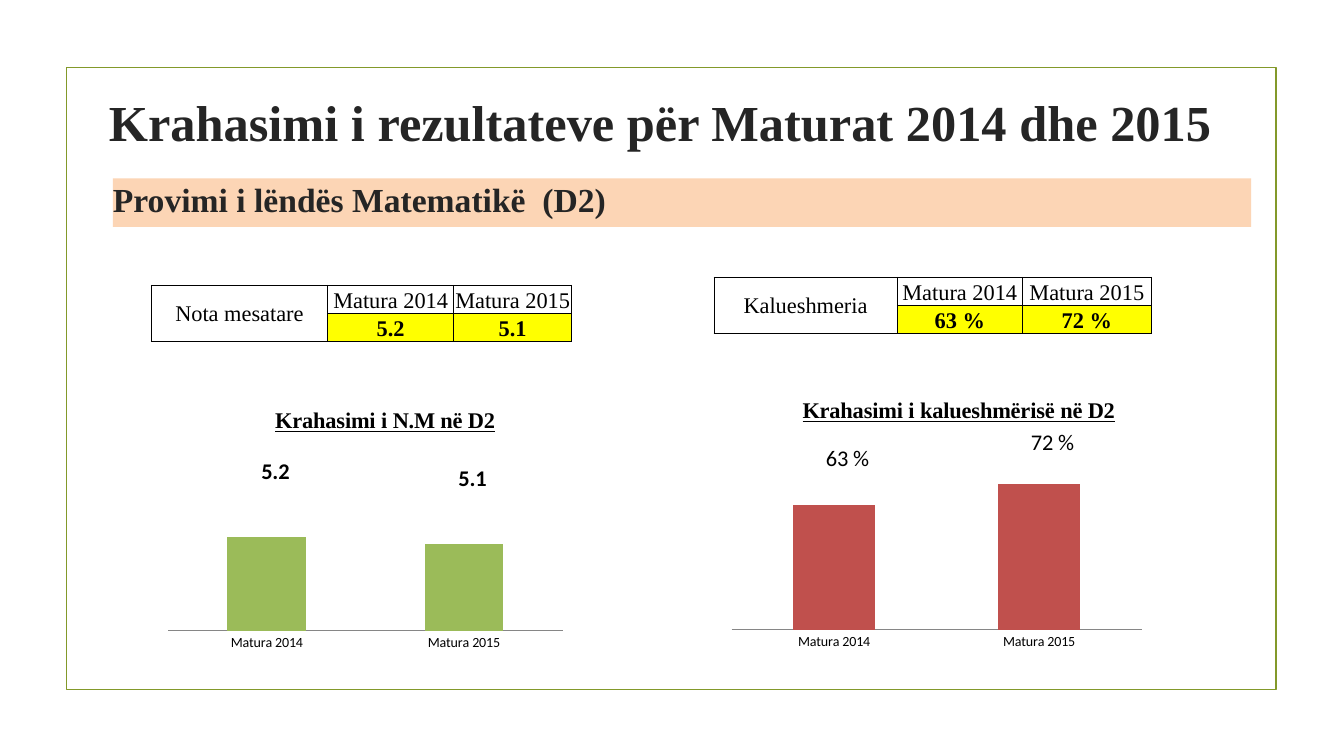
from dataclasses import dataclass

from lxml import etree
from pptx import Presentation
from pptx.chart.data import CategoryChartData
from pptx.dml.color import RGBColor
from pptx.enum.chart import XL_CHART_TYPE, XL_LABEL_POSITION, XL_TICK_LABEL_POSITION, XL_TICK_MARK
from pptx.enum.shapes import MSO_SHAPE
from pptx.enum.text import MSO_ANCHOR, PP_ALIGN
from pptx.oxml.ns import qn
from pptx.util import Inches, Pt

RECTANGLE = MSO_SHAPE.RECTANGLE
TOP, MIDDLE, BOTTOM = MSO_ANCHOR.TOP, MSO_ANCHOR.MIDDLE, MSO_ANCHOR.BOTTOM
LEFT, CENTER = PP_ALIGN.LEFT, PP_ALIGN.CENTER
COLUMNS = XL_CHART_TYPE.COLUMN_CLUSTERED
OUTSIDE_END = XL_LABEL_POSITION.OUTSIDE_END
NEXT_TO_AXIS = XL_TICK_LABEL_POSITION.NEXT_TO_AXIS
NO_TICKS = XL_TICK_MARK.NONE

SERIF, SANS = "Times New Roman", "Calibri"
COLORS = {
    "frame": "83992A", "heading": "252525", "band": "FCD5B5", "text": "000000",
    "highlight": "FFFF00", "axis": "868686", "green": "9BBB59", "red": "C0504D",
}
YEARS = ("Matura 2014", "Matura 2015")
ROW_HEIGHT = 0.28
CHART_2012 = "http://schemas.microsoft.com/office/drawing/2012/chart"
LABEL_EXTENSION = "{CE6537A1-D6FC-4f65-9D91-7224C49458BB}"


@dataclass
class Comparison:
    """One measure of both years: its table and its column chart."""
    measure: str
    values: tuple[float, float]
    shown: tuple[str, str]
    table_at: tuple[float, float]
    column_widths: tuple[float, float, float]
    chart_title: str
    chart_at: tuple[float, float, float, float]
    title_at: tuple[float, float]
    plot_at: tuple[float, float, float, float]
    axis_range: tuple[float, float]
    number_format: str
    color: str
    bold_labels: bool
    label_shifts: tuple[tuple[float, float], tuple[float, float]]


COMPARISONS = (
    Comparison("Kalueshmeria", (63, 72), ("63 %", "72 %"), (7.08, 2.75), (1.82, 1.24, 1.28),
               "Krahasimi i kalueshmërisë në D2", (7.08, 3.75, 4.42, 2.81), (0.19, 0.05),
               (0.04, 0.14, 0.92, 0.75), (10, 100), '0" %"', "red", False,
               ((0.03, -0.1), (0.03, -0.08))),
    Comparison("Nota mesatare", (5.2, 5.1), ("5.2", "5.1"), (1.5, 2.83), (1.75, 1.25, 1.17),
               "Krahasimi i N.M në D2", (1.5, 3.67, 4.25, 2.91), (0.28, 0.11),
               (0.04, 0.15, 0.92, 0.74), (3.9, 6.9), "0.0", "green", True,
               ((0.02, -0.16), (0.02, -0.16))),
)


def rgb(name: str) -> RGBColor:
    return RGBColor.from_string(COLORS[name])


def format_font(font, size: float, name: str = SERIF, color: str = "text",
                bold: bool = False, underline: bool = False) -> None:
    font.size, font.name = Pt(size), name
    font.bold, font.underline = bold, underline
    font.color.rgb = rgb(color)


def write(frame, text: str, align=LEFT, **font_format) -> None:
    para = frame.paragraphs[0]
    para.alignment = align
    span = para.add_run()
    span.text = text
    format_font(span.font, **font_format)


def add_frame(page) -> None:
    frame = page.shapes.add_shape(RECTANGLE, Inches(0.66), Inches(0.67), Inches(12), Inches(6.17))
    frame.shadow.inherit = False
    frame.fill.background()
    frame.line.color.rgb = rgb("frame")
    frame.line.width = Pt(1.25)


def add_heading(page, text: str, at: tuple[float, float, float, float], size: float,
                fill: str | None = None) -> None:
    box = page.shapes.add_textbox(*map(Inches, at))
    if fill:
        box.fill.solid()
        box.fill.fore_color.rgb = rgb(fill)
    frame = box.text_frame
    frame.word_wrap = True
    frame.vertical_anchor = TOP
    frame.margin_left = frame.margin_right = frame.margin_top = frame.margin_bottom = 0
    write(frame, text, size=size, color="heading", bold=True)


def add_borders(cell) -> None:
    properties = cell._tc.get_or_add_tcPr()
    for side in ("a:lnL", "a:lnR", "a:lnT", "a:lnB"):
        line = etree.SubElement(properties, qn(side), w=str(Pt(0.5)))
        fill = etree.SubElement(line, qn("a:solidFill"))
        etree.SubElement(fill, qn("a:srgbClr"), val=COLORS["text"])


def add_table(page, item: Comparison) -> None:
    left, top = item.table_at
    table = page.shapes.add_table(2, 3, Inches(left), Inches(top),
                                  Inches(sum(item.column_widths)), Inches(2 * ROW_HEIGHT)).table
    table.first_row = table.horz_banding = False
    for column, width in zip(table.columns, item.column_widths):
        column.width = Inches(width)
    for row in table.rows:
        row.height = Inches(ROW_HEIGHT)
    table.cell(0, 0).merge(table.cell(1, 0))
    rows = ((item.measure, *YEARS), ("", *item.shown))
    for row_index, texts in enumerate(rows):
        for column_index, text in enumerate(texts):
            cell = table.cell(row_index, column_index)
            add_borders(cell)
            cell.margin_left = cell.margin_right = cell.margin_top = Inches(0.01)
            cell.margin_bottom = 0
            cell.vertical_anchor = BOTTOM if column_index else MIDDLE
            highlighted = row_index == 1 and column_index > 0
            if highlighted:
                cell.fill.solid()
                cell.fill.fore_color.rgb = rgb("highlight")
            else:
                cell.fill.background()
            if text:
                write(cell.text_frame, text, align=CENTER, size=16, bold=highlighted)


def set_layout(parent, index: int, **settings) -> None:
    """Give a chart part a manual layout, as its child at the index."""
    for old in parent.findall(qn("c:layout")):
        parent.remove(old)
    layout = etree.Element(qn("c:layout"))
    manual = etree.SubElement(layout, qn("c:manualLayout"))
    for name, value in settings.items():
        etree.SubElement(manual, qn(f"c:{name}"), val=str(value))
    parent.insert(index, layout)


def hide_leader_lines(labels) -> None:
    for flag in labels.findall(qn("c:showLeaderLines")):
        flag.set("val", "0")
    extensions = etree.SubElement(labels, qn("c:extLst"))
    extension = etree.SubElement(extensions, qn("c:ext"), uri=LABEL_EXTENSION)
    etree.SubElement(extension, f"{{{CHART_2012}}}showLeaderLines",
                     nsmap={"c15": CHART_2012}, val="0")


def add_chart(page, item: Comparison) -> None:
    chart_data = CategoryChartData(number_format=item.number_format)
    chart_data.categories = YEARS
    chart_data.add_series(item.measure, item.values)
    chart = page.shapes.add_chart(COLUMNS, *map(Inches, item.chart_at), chart_data).chart
    format_font(chart.font, size=10, name=SANS)
    chart.has_legend = False

    write(chart.chart_title.text_frame, item.chart_title, align=CENTER,
          size=16, bold=True, underline=True)
    title = chart._chartSpace.xpath("c:chart/c:title")[0]
    x, y = item.title_at
    set_layout(title, 1, xMode="edge", yMode="edge", x=x, y=y)
    x, y, width, height = item.plot_at
    set_layout(chart._chartSpace.xpath("c:chart/c:plotArea")[0], 0, layoutTarget="inner",
               xMode="edge", yMode="edge", x=x, y=y, w=width, h=height)

    years, scale = chart.category_axis, chart.value_axis
    years.major_tick_mark = years.minor_tick_mark = NO_TICKS
    years.tick_label_position = NEXT_TO_AXIS
    years.format.line.color.rgb = rgb("axis")
    scale.minimum_scale, scale.maximum_scale = item.axis_range
    scale.has_major_gridlines = scale.visible = False

    plot = chart.plots[0]
    plot.gap_width = 150
    plot.vary_by_categories = False
    series = plot.series[0]
    series.format.fill.solid()
    series.format.fill.fore_color.rgb = rgb(item.color)
    for index, (x, y) in enumerate(item.label_shifts):
        label = series.points[index].data_label
        format_font(label.font, size=16, name=SANS, bold=item.bold_labels)
        label.position = OUTSIDE_END
        set_layout(series._element.xpath("c:dLbls/c:dLbl")[index], 1, x=x, y=y)
    hide_leader_lines(series._element.xpath("c:dLbls")[0])


def main() -> None:
    deck = Presentation()
    deck.slide_width, deck.slide_height = Inches(13.33), Inches(7.5)
    page = deck.slides.add_slide(deck.slide_layouts[6])
    add_frame(page)
    add_heading(page, "Krahasimi i rezultateve për Maturat 2014 dhe 2015",
                (1.08, 0.9, 11.08, 0.61), 36)
    add_heading(page, "Provimi i lëndës Matematikë  (D2)", (1.12, 1.77, 11.29, 0.48), 24, "band")
    for item in COMPARISONS:
        add_table(page, item)
        add_chart(page, item)
    deck.save("out.pptx")


if __name__ == "__main__":
    main()
